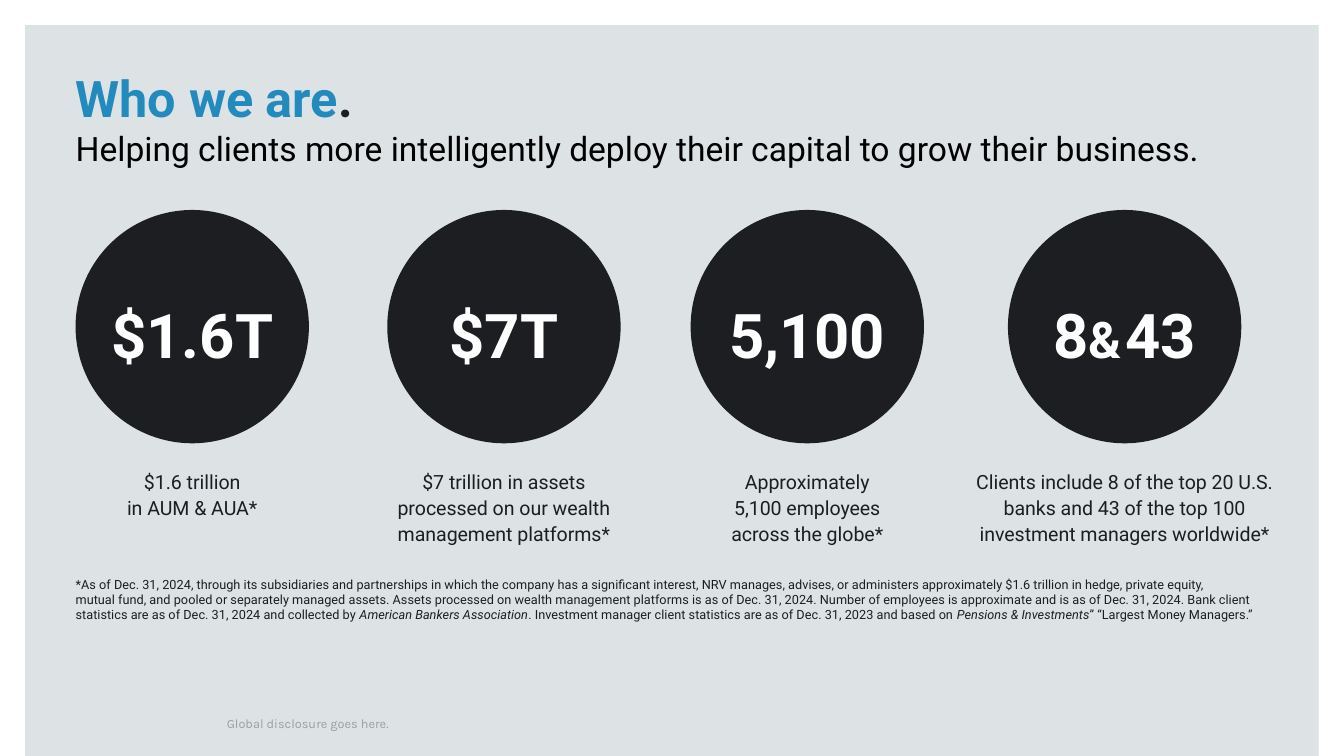
import pptx
import pptx.util
import pptx.dml.color
import pptx.enum.shapes
import pptx.enum.text
import pptx.oxml.ns
import lxml.etree

Pt = pptx.util.Pt
ALIGN = pptx.enum.text.PP_ALIGN
ANCHOR = pptx.enum.text.MSO_ANCHOR
SHAPE = pptx.enum.shapes.MSO_SHAPE

# Content: each run is (text, overrides of the text format)
COLORS = {"panel": "C3CCD2", "dark": "1C1E22", "accent": "228ABC",
          "black": "000000", "white": "FFFFFF", "gray": "666666"}

TITLE = [("Who we are", {"color": "accent"}),
         (".\n", {}),
         ("Helping clients more intelligently deploy their capital to grow their business.",
          {"size": 18, "color": "black", "bold": False})]

# Circle left, label width, figure runs, label
FACTS = [
    (40.5, 125, [("$1.6T", {})], "$1.6 trillion\nin AUM & AUA*"),
    (207.5, 127, [("$7T", {})],
     "$7 trillion in assets processed on our wealth management platforms*"),
    (370, 125, [("5,100", {})], "Approximately\n5,100 employees\nacross the globe*"),
    (540, 167, [("8", {}), ("&", {"size": 27, "tracking": 2.2}), ("43", {})],
     "Clients include 8 of the top 20 U.S. banks and 43 of the top 100 "
     "investment managers worldwide*"),
]

FOOTNOTE = [
    ("*As of Dec. 31, 2024, through its subsidiaries and partnerships in which the company has "
     "a significant interest, NRV manages, advises, or administers approximately $1.6 trillion "
     "in hedge, private equity,\nmutual fund, and pooled or separately managed assets. Assets "
     "processed on wealth management platforms is as of Dec. 31, 2024. Number of employees is "
     "approximate and is as of Dec. 31, 2024. Bank client statistics are as of Dec. 31, 2024 "
     "and collected by ", {}),
    ("American Bankers Association", {"italic": True}),
    (". Investment manager client statistics are as of Dec. 31, 2023 and based on ", {}),
    ("Pensions & Investments", {"italic": True}),
    ("” “Largest Money Managers.”", {}),
]
DISCLOSURE = [("Global disclosure goes here.", {})]

# Layout
MARGIN = 40.5
TEXT_WIDTH = 639
CIRCLE_TOP, CIRCLE_SIZE = 112.5, 125
FIGURE_TOP, FIGURE_HEIGHT = 153.5, 44
LABEL_TOP, LABEL_HEIGHT = 249, 44


def rgb(name):
    return pptx.dml.color.RGBColor.from_string(COLORS[name])


def write_text(shape, runs, align=ALIGN.LEFT, anchor=ANCHOR.TOP, inset=0,
               line_spacing=1.0, **base):
    frame = shape.text_frame
    frame.word_wrap = True
    frame.auto_size = pptx.enum.text.MSO_AUTO_SIZE.NONE
    frame.vertical_anchor = anchor
    frame.margin_left = frame.margin_right = Pt(inset)
    frame.margin_top = frame.margin_bottom = Pt(inset)
    paragraph = frame.paragraphs[0]
    paragraph.alignment = align
    paragraph.line_spacing = line_spacing
    for text, overrides in runs:
        style = {"font": "Roboto", "color": "dark", "bold": False,
                 "italic": False, **base, **overrides}
        for index, line in enumerate(text.split("\n")):
            if index:
                paragraph.add_line_break()
            if not line:
                continue
            run = paragraph.add_run()
            run.text = line
            run.font.name = style["font"]
            run.font.size = Pt(style["size"])
            run.font.bold = style["bold"]
            run.font.italic = style["italic"]
            run.font.color.rgb = rgb(style["color"])
            if "tracking" in style:
                run.font._element.set("spc", str(round(style["tracking"] * 100)))


def add_text(slide, left, top, width, height, runs, **style):
    box = slide.shapes.add_textbox(Pt(left), Pt(top), Pt(width), Pt(height))
    write_text(box, runs, **style)


def add_filled(slide, kind, left, top, width, height, color, opacity=None):
    shape = slide.shapes.add_shape(kind, Pt(left), Pt(top), Pt(width), Pt(height))
    shape.shadow.inherit = False
    shape.fill.solid()
    shape.fill.fore_color.rgb = rgb(color)
    shape.line.fill.background()
    if opacity is not None:
        fill_color = shape.element.spPr.find(".//" + pptx.oxml.ns.qn("a:srgbClr"))
        alpha = lxml.etree.SubElement(fill_color, pptx.oxml.ns.qn("a:alpha"))
        alpha.set("val", str(opacity * 1000))


def main():
    presentation = pptx.Presentation()
    presentation.slide_width, presentation.slide_height = Pt(720), Pt(405)
    slide = presentation.slides.add_slide(presentation.slide_layouts[5])

    # Disclosure, seen through the translucent panel
    add_text(slide, 121.5, 364.5, 387, 27, DISCLOSURE, anchor=ANCHOR.BOTTOM,
             font="Karla", size=6.8, color="gray")
    add_filled(slide, SHAPE.RECTANGLE, 13.5, 13.5, 693, 391.5, "panel", opacity=56)

    # Title, brought in front of the panel
    title = slide.shapes.title
    title.element.getparent().append(title.element)
    title.left, title.top = Pt(MARGIN), Pt(36)
    title.width, title.height = Pt(TEXT_WIDTH), Pt(50)
    write_text(title, TITLE, size=27, bold=True)

    # Footnote
    add_text(slide, MARGIN, 304, TEXT_WIDTH, 29.5, FOOTNOTE,
             anchor=ANCHOR.BOTTOM, size=6.8)

    # Circles with figures, and labels centred below
    centered = {"align": ALIGN.CENTER, "inset": 1.5, "line_spacing": 1.1}
    for left, label_width, figure, label in FACTS:
        add_filled(slide, SHAPE.OVAL, left, CIRCLE_TOP, CIRCLE_SIZE, CIRCLE_SIZE, "dark")
        add_text(slide, left, FIGURE_TOP, CIRCLE_SIZE, FIGURE_HEIGHT, figure,
                 size=33, color="white", bold=True, **centered)
        label_left = left + (CIRCLE_SIZE - label_width) / 2
        add_text(slide, label_left, LABEL_TOP, label_width, LABEL_HEIGHT,
                 [(label, {})], size=10.5, **centered)

    presentation.save("out.pptx")


if __name__ == "__main__":
    main()
